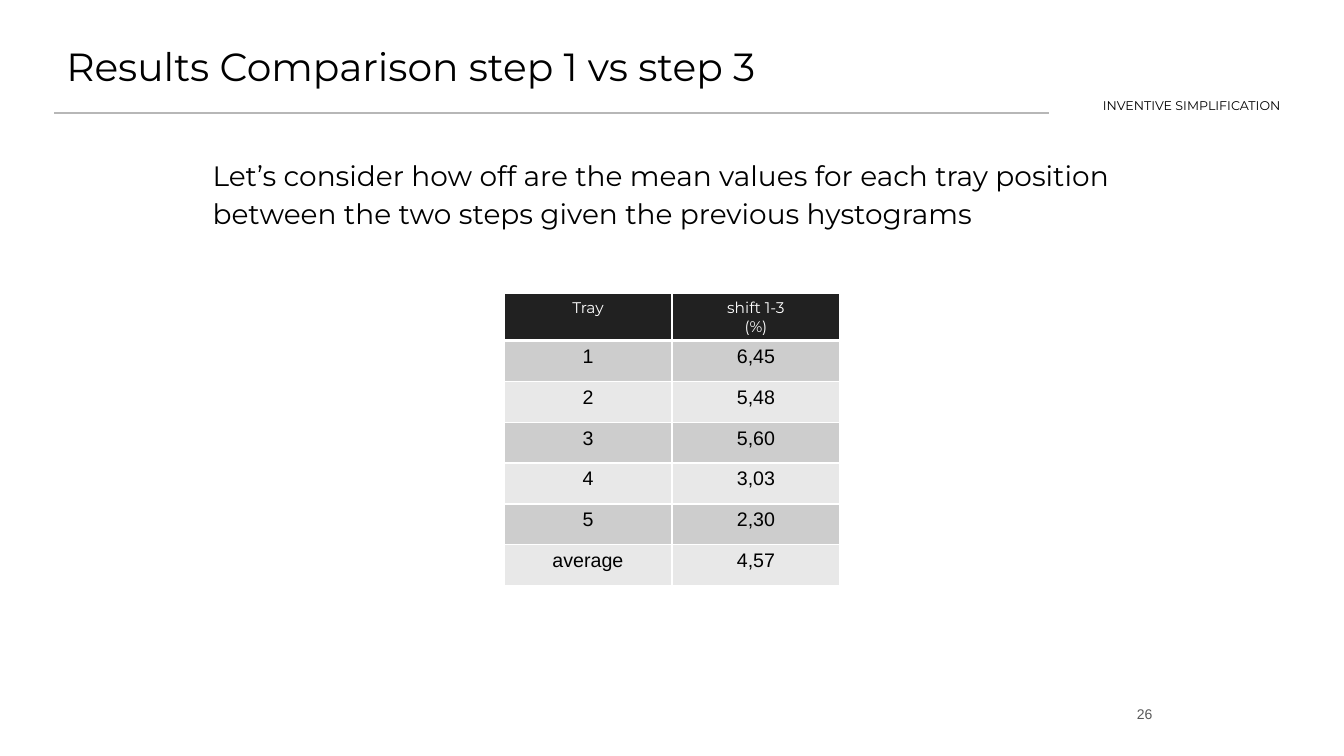
import pptx
import pptx.util
import pptx.dml.color
import pptx.enum.shapes
import pptx.enum.text
import pptx.oxml
import pptx.oxml.ns

Pt = pptx.util.Pt
ALIGN = pptx.enum.text.PP_ALIGN
ANCHOR = pptx.enum.text.MSO_ANCHOR
COLORS = {"black": "000000", "white": "FFFFFF", "rule": "B7B7B7", "page": "595959",
          "head": "212121", "odd": "CDCDCD", "even": "E8E8E8"}


def style(para, size, face, color, align):
    para.alignment = align
    para.font.size = Pt(size)
    para.font.name = face
    para.font.color.rgb = pptx.dml.color.RGBColor.from_string(COLORS[color])


def label(text, box, size, face="Montserrat", color="black", align=ALIGN.LEFT,
          anchor=ANCHOR.TOP):
    frame = slide.shapes.add_textbox(*map(Pt, box)).text_frame
    frame.word_wrap = True
    frame.vertical_anchor = anchor
    frame.margin_left = frame.margin_right = Pt(7.2)
    frame.margin_top = frame.margin_bottom = Pt(7.2)
    frame.text = text
    para = frame.paragraphs[0]
    style(para, size, face, color, align)
    return para


deck = pptx.Presentation()
deck.slide_width, deck.slide_height = Pt(960), Pt(540)
slide = deck.slides.add_slide(deck.slide_layouts[6])

# Header: tag line, rule and title
label("INVENTIVE SIMPLIFICATION", (743.8, 64.8, 214.6, 23), 9, align=ALIGN.CENTER)
rule = slide.shapes.add_connector(pptx.enum.shapes.MSO_CONNECTOR.STRAIGHT,
                                  Pt(38.9), Pt(80.6), Pt(749.5), Pt(80.6))
rule.line.color.rgb = pptx.dml.color.RGBColor.from_string(COLORS["rule"])
rule.line.width = Pt(1.5)
rule._element.spPr.append(pptx.oxml.parse_xml(
    f'<a:effectLst {pptx.oxml.ns.nsdecls("a")}/>'))
label("Results Comparison step 1 vs step 3", (40.3, 23, 532.8, 59.8), 28)

# Lead text
lead = label("Let’s consider how off are the mean values for each tray position "
             "between the two steps given the previous hystograms",
             (144.7, 102.2, 671, 47.5), 20)
lead.line_spacing = 1.15
lead.space_after = Pt(4)

# Page number
label("26", (787, 489.6, 43.2, 41), 10, "Arial", "page", ALIGN.RIGHT, ANCHOR.MIDDLE)

# Table of shifts per tray
rows = [("Tray", "shift 1-3\v(%)"), ("1", "6,45"), ("2", "5,48"), ("3", "5,60"),
        ("4", "3,03"), ("5", "2,30"), ("average", "4,57")]
table = slide.shapes.add_table(len(rows), 2, Pt(360), Pt(209.5), Pt(240), Pt(208.8)).table
for r, row in enumerate(rows):
    table.rows[r].height = Pt(29.2 if r else 33.6)
    fill = "head" if r == 0 else "odd" if r % 2 else "even"
    for c, text in enumerate(row):
        cell = table.cell(r, c)
        cell.text = text
        para = cell.text_frame.paragraphs[0]
        if r == 0:
            style(para, 11, "Montserrat", "white", ALIGN.CENTER)
            para.font.bold = False
        else:
            style(para, 14, "Arial", "black", ALIGN.CENTER)
            para.font.bold = False
        # White borders, thick between head and body
        props = cell._tc.get_or_add_tcPr()
        for side in "LRTB":
            thick = (r, side) in ((0, "B"), (1, "T"))
            props.append(pptx.oxml.parse_xml(
                f'<a:ln{side} {pptx.oxml.ns.nsdecls("a")} w="{Pt(3 if thick else 1)}">'
                f'<a:solidFill><a:srgbClr val="{COLORS["white"]}"/></a:solidFill></a:ln{side}>'))
        cell.fill.solid()
        cell.fill.fore_color.rgb = pptx.dml.color.RGBColor.from_string(COLORS[fill])

deck.save("out.pptx")
